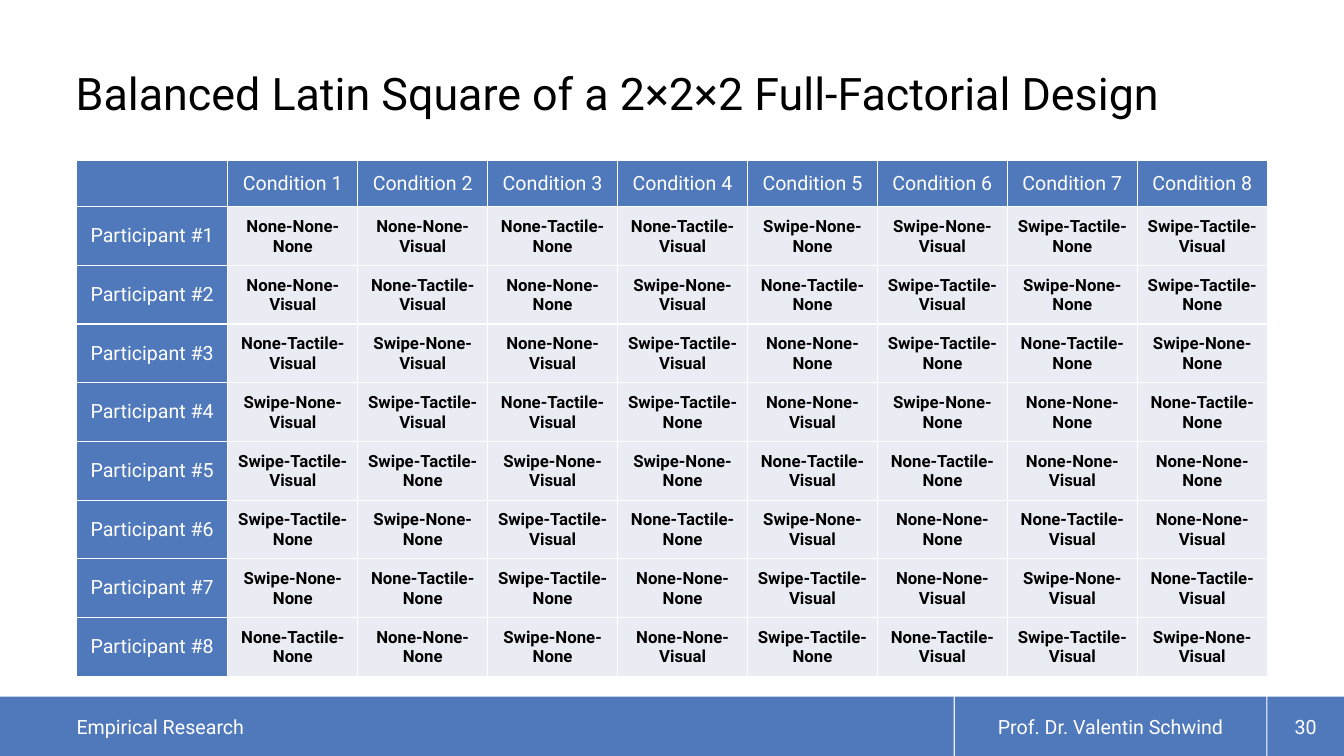
from dataclasses import dataclass
from itertools import product

from lxml import etree
from pptx import Presentation
from pptx.dml.color import RGBColor
from pptx.enum.shapes import MSO_SHAPE
from pptx.enum.text import MSO_ANCHOR, PP_ALIGN
from pptx.oxml.ns import qn
from pptx.slide import Slide
from pptx.table import _Cell
from pptx.text.text import TextFrame
from pptx.util import Inches, Pt

BLUE = RGBColor(0x50, 0x79, 0xBC)
PALE = RGBColor(0xE9, 0xEC, 0xF3)
WHITE = RGBColor(0xFF, 0xFF, 0xFF)
BLACK = RGBColor(0x00, 0x00, 0x00)
RECTANGLE = MSO_SHAPE.RECTANGLE
LEFT, CENTER = PP_ALIGN.LEFT, PP_ALIGN.CENTER
MIDDLE, BOTTOM = MSO_ANCHOR.MIDDLE, MSO_ANCHOR.BOTTOM
FONT = "Roboto"

# Three factors with two levels each give the eight conditions
CONDITIONS = ["-".join(levels) for levels in
              product(("None", "Swipe"), ("None", "Tactile"), ("None", "Visual"))]
# Every column runs through this cycle, starting at its own condition
CYCLE = (0, 1, 3, 5, 7, 6, 4, 2)
COUNT = len(CONDITIONS)

TABLE_LEFT, TABLE_TOP = 0.76, 1.59
TABLE_WIDTH, TABLE_HEIGHT = 11.81, 5.12
HEADER_WIDTH, HEADER_HEIGHT = 1.5, 0.46
FOOTER_TOP, FOOTER_HEIGHT = 6.91, 0.59


@dataclass(frozen=True)
class TextStyle:
    size: int
    color: RGBColor
    bold: bool = False
    align: PP_ALIGN = CENTER


@dataclass(frozen=True)
class FooterPart:
    text: str
    left: float
    width: float
    align: PP_ALIGN = CENTER
    inset: float = 0


TITLE_STYLE = TextStyle(32, BLACK, align=LEFT)
HEADER_STYLE = TextStyle(14, WHITE)
CONDITION_STYLE = TextStyle(12, BLACK, bold=True)
FOOTER_PARTS = (
    FooterPart("Empirical Research", 0, 9.46, LEFT, TABLE_LEFT),
    FooterPart("Prof. Dr. Valentin Schwind", 9.47, 3.09),
    FooterPart("30", 12.57, 0.76),
)


def write(frame: TextFrame, text: str, style: TextStyle) -> None:
    frame.text = text
    paragraph = frame.paragraphs[0]
    paragraph.alignment = style.align
    font = paragraph.font if not text else paragraph.runs[0].font
    font.name, font.size, font.bold = FONT, Pt(style.size), style.bold
    font.color.rgb = style.color


def set_frame(frame: TextFrame, anchor: MSO_ANCHOR, inset: float = 0) -> None:
    frame.word_wrap = True
    frame.vertical_anchor = anchor
    frame.margin_left = Inches(inset)
    frame.margin_top = frame.margin_right = frame.margin_bottom = 0


def add_title(slide: Slide, text: str) -> None:
    title = slide.shapes.add_textbox(Inches(0.75), Inches(0.13), Inches(11.81), Inches(1.06))
    set_frame(title.text_frame, BOTTOM)
    write(title.text_frame, text, TITLE_STYLE)
    title.text_frame.paragraphs[0].line_spacing = 0.9


def add_footer_part(slide: Slide, part: FooterPart) -> None:
    bar = slide.shapes.add_shape(RECTANGLE, Inches(part.left), Inches(FOOTER_TOP),
                                 Inches(part.width), Inches(FOOTER_HEIGHT))
    bar.shadow.inherit = False
    bar.fill.solid()
    bar.fill.fore_color.rgb = BLUE
    bar.line.fill.background()
    set_frame(bar.text_frame, MIDDLE, part.inset)
    write(bar.text_frame, part.text, TextStyle(14, WHITE, align=part.align))


def add_borders(cell: _Cell) -> None:
    properties = cell._tc.get_or_add_tcPr()
    for side in ("a:lnL", "a:lnR", "a:lnT", "a:lnB"):
        line = etree.SubElement(properties, qn(side), w=str(Pt(1)))
        fill = etree.SubElement(line, qn("a:solidFill"))
        etree.SubElement(fill, qn("a:srgbClr"), val=str(WHITE))


def fill_cell(cell: _Cell, text: str, style: TextStyle, color: RGBColor, inset: float) -> None:
    add_borders(cell)
    cell.fill.solid()
    cell.fill.fore_color.rgb = color
    cell.vertical_anchor = MIDDLE
    cell.margin_left = cell.margin_top = cell.margin_right = Inches(inset)
    cell.margin_bottom = 0
    write(cell.text_frame, text, style)


def add_latin_square(slide: Slide) -> None:
    table = slide.shapes.add_table(COUNT + 1, COUNT + 1, Inches(TABLE_LEFT), Inches(TABLE_TOP),
                                   Inches(TABLE_WIDTH), Inches(TABLE_HEIGHT)).table
    table.horz_banding = False
    table.first_row = False

    # Equal columns and rows beside the headers
    for index in range(COUNT + 1):
        table.columns[index].width = Inches(
            (TABLE_WIDTH - HEADER_WIDTH) / COUNT if index else HEADER_WIDTH)
        table.rows[index].height = Inches(
            (TABLE_HEIGHT - HEADER_HEIGHT) / COUNT if index else HEADER_HEIGHT)

    # Headers
    fill_cell(table.cell(0, 0), "", HEADER_STYLE, BLUE, 0)
    for number in range(1, COUNT + 1):
        fill_cell(table.cell(0, number), f"Condition {number}", HEADER_STYLE, BLUE, 0)
        fill_cell(table.cell(number, 0), f"Participant #{number}", HEADER_STYLE, BLUE, 0)

    # Balanced order of conditions
    for participant, position in product(range(COUNT), repeat=2):
        step = (CYCLE.index(position) + participant) % COUNT
        fill_cell(table.cell(participant + 1, position + 1), CONDITIONS[CYCLE[step]],
                  CONDITION_STYLE, PALE, 0.01)


def main() -> None:
    presentation = Presentation()
    presentation.slide_width, presentation.slide_height = Inches(13.33), Inches(7.5)
    slide = presentation.slides.add_slide(presentation.slide_layouts[6])
    for part in FOOTER_PARTS:
        add_footer_part(slide, part)
    add_title(slide, "Balanced Latin Square of a 2×2×2 Full-Factorial Design")
    add_latin_square(slide)
    presentation.save("out.pptx")


if __name__ == "__main__":
    main()
